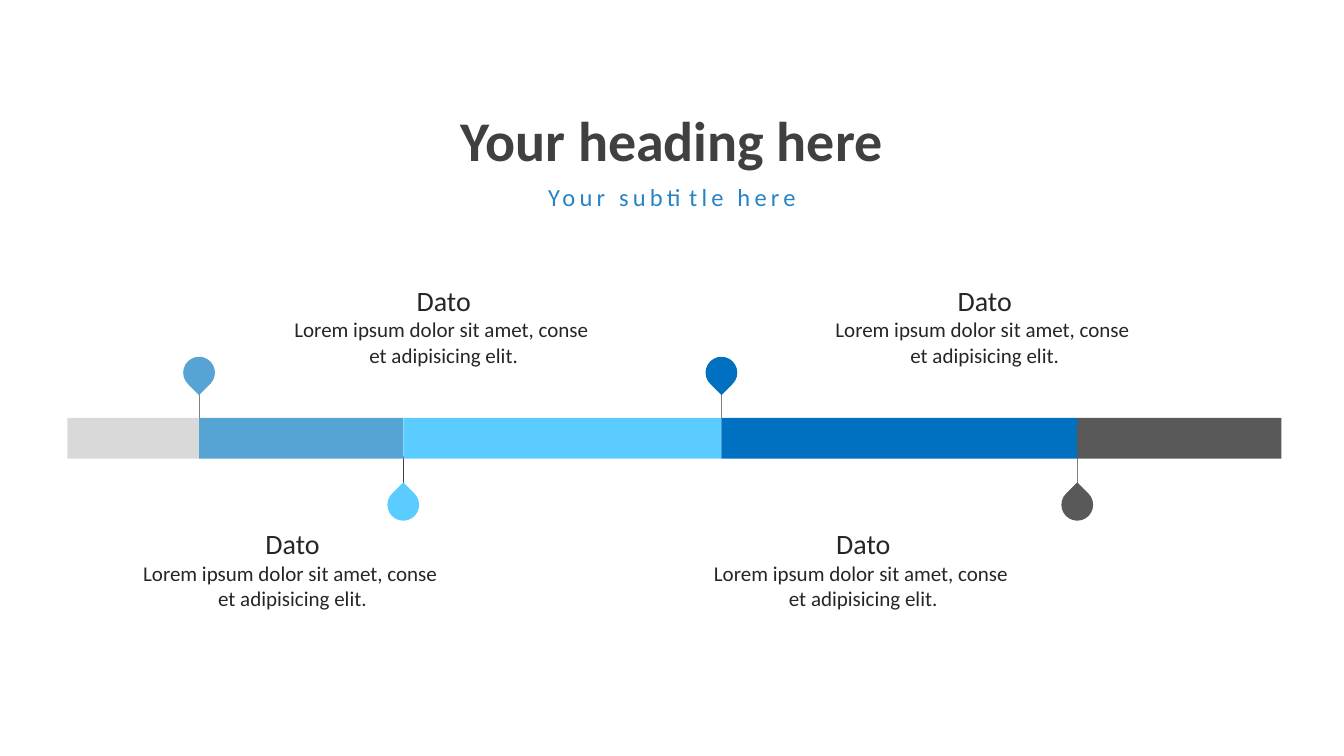
import pptx
import pptx.dml.color
import pptx.enum.shapes
import pptx.enum.text
import pptx.oxml.ns
import pptx.util
from dataclasses import dataclass
from lxml import etree
from pptx.dml.color import RGBColor
from pptx.util import Cm

SHAPE = pptx.enum.shapes.MSO_SHAPE
WHITE = RGBColor(0xFF, 0xFF, 0xFF)
SILVER = RGBColor(0xD9, 0xD9, 0xD9)
STEEL = RGBColor(0x55, 0xA4, 0xD4)
SKY = RGBColor(0x5B, 0xCC, 0xFF)
BLUE = RGBColor(0x00, 0x70, 0xC0)
CHARCOAL = RGBColor(0x59, 0x59, 0x59)
GREY = RGBColor(0x80, 0x80, 0x80)
DARK = RGBColor(0x40, 0x40, 0x40)
INK = RGBColor(0x26, 0x26, 0x26)
ACCENT = RGBColor(0x26, 0x83, 0xC6)

SLIDE_W, SLIDE_H = 67.72, 38.1
BAR_TOP, BAR_H, BAR_END = 21.06, 2.06, 64.57
STEM, DROP = 1.42, 1.6
LABEL_W, LABEL_H = 17.6, 5.38
BODY = "Lorem ipsum dolor sit amet, conse \vet adipisicing elit."


@dataclass
class Segment:
    left: float
    color: RGBColor


@dataclass
class Marker:
    x: float
    color: RGBColor
    above: bool
    stem_color: RGBColor = GREY


@dataclass
class Label:
    left: float
    top: float


SEGMENTS = [
    Segment(3.4, SILVER),
    Segment(10.03, STEEL),
    Segment(20.32, SKY),
    Segment(36.35, BLUE),
    Segment(54.28, CHARCOAL),
]
MARKERS = [
    Marker(seg.left, seg.color, i % 2 == 0, DARK if i == 1 else GREY)
    for i, seg in enumerate(SEGMENTS[1:])
]
LABELS = [Label(13.56, 13.31), Label(40.82, 13.31), Label(5.94, 25.58), Label(34.7, 25.58)]


def add_block(s, kind, left: float, top: float, width: float, height: float,
              color: RGBColor, rotation: float = 0) -> None:
    sp = s.shapes.add_shape(kind, Cm(left), Cm(top), Cm(width), Cm(height))
    sp.shadow.inherit = False
    sp.rotation = rotation
    sp.fill.solid()
    sp.fill.fore_color.rgb = color
    sp.line.fill.background()


def add_stem(s, m: Marker) -> None:
    start = BAR_TOP if m.above else BAR_TOP + BAR_H - 0.14
    end = start - STEM if m.above else start + STEM
    cx = s.shapes.add_connector(
        pptx.enum.shapes.MSO_CONNECTOR.STRAIGHT, Cm(m.x), Cm(start), Cm(m.x), Cm(end))
    cx.line.color.rgb = m.stem_color
    cx.line.width = pptx.util.Pt(0.5)
    etree.SubElement(cx._element.spPr, pptx.oxml.ns.qn("a:effectLst"))


def add_drop(s, m: Marker) -> None:
    top, rotation = (17.98, 135) if m.above else (24.64, 315)
    add_block(s, SHAPE.TEAR, m.x - DROP / 2, top, DROP, DROP, m.color, rotation)


def write(p, text: str, size: float, color: RGBColor, bold: bool = False) -> None:
    p.text = text
    p.alignment = pptx.enum.text.PP_ALIGN.CENTER
    p.space_before = pptx.util.Pt(0)
    for r in p.runs:
        for name, value in {"name": "Calibri", "size": pptx.util.Pt(size), "bold": bold}.items():
            setattr(r.font, name, value)
        r.font.color.rgb = color


def set_frame(tf) -> None:
    values = {
        "word_wrap": True,
        "auto_size": pptx.enum.text.MSO_AUTO_SIZE.NONE,
        "vertical_anchor": pptx.enum.text.MSO_ANCHOR.TOP,
    }
    for name, value in values.items():
        setattr(tf, name, value)


def place_heading(sp, top: float, height: float, text: str, size: float,
                  color: RGBColor, bold: bool = False) -> None:
    box = {"left": 0, "top": top, "width": SLIDE_W, "height": height}
    for name, value in box.items():
        setattr(sp, name, Cm(value))
    set_frame(sp.text_frame)
    write(sp.text_frame.paragraphs[0], text, size, color, bold)


def add_label(s, label: Label) -> None:
    sp = s.shapes.add_textbox(Cm(label.left), Cm(label.top), Cm(LABEL_W), Cm(LABEL_H))
    tf = sp.text_frame
    set_frame(tf)
    p = tf.paragraphs[0]
    write(p, "Dato", 40, INK)
    p.line_spacing = 1.5
    write(tf.add_paragraph(), BODY, 30, INK)


def main() -> None:
    prs = pptx.Presentation()
    prs.slide_width, prs.slide_height = Cm(SLIDE_W), Cm(SLIDE_H)
    s = prs.slides.add_slide(prs.slide_layouts[0])
    s.background.fill.solid()
    s.background.fill.fore_color.rgb = WHITE

    subtitle = s.placeholders[1]
    place_heading(s.shapes.title, 5.18, 3.68, "Your heading here", 80, DARK, True)
    place_heading(subtitle, 9.07, 1.75, "Your subtitle here", 35, ACCENT)
    subtitle.text_frame.paragraphs[0].runs[0].font._element.set("spc", "600")

    for m in MARKERS:
        add_stem(s, m)
    ends = [seg.left for seg in SEGMENTS[1:]] + [BAR_END]
    for seg, end in zip(SEGMENTS, ends):
        add_block(s, SHAPE.RECTANGLE, seg.left, BAR_TOP, end - seg.left, BAR_H, seg.color)
    for m in MARKERS:
        add_drop(s, m)
    for label in LABELS:
        add_label(s, label)
    prs.save("out.pptx")


if __name__ == "__main__":
    main()
